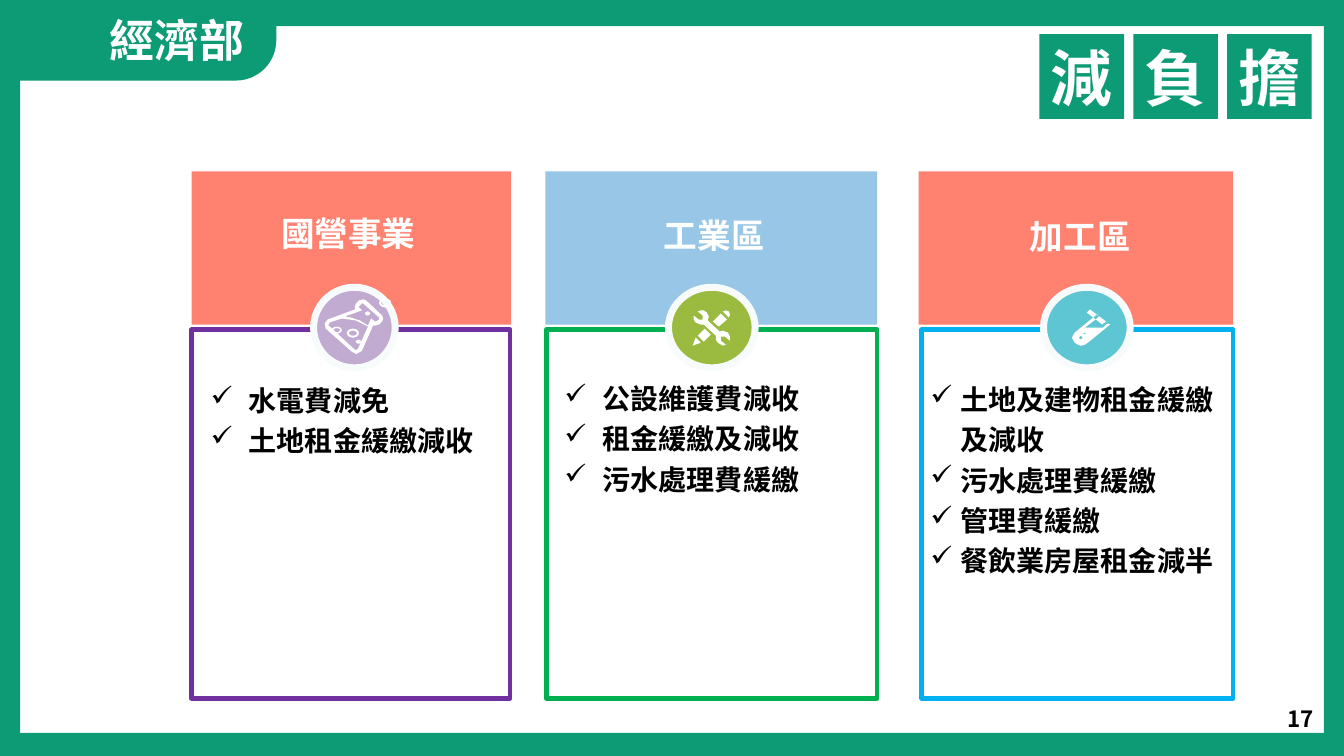
from lxml import etree
from pptx import Presentation
from pptx.dml.color import RGBColor
from pptx.enum.shapes import MSO_SHAPE
from pptx.enum.text import MSO_ANCHOR, MSO_AUTO_SIZE, PP_ALIGN
from pptx.oxml.ns import qn
from pptx.util import Pt

PX = 9144  # EMU in one px, 100 px to the inch
FONT = "Noto Sans CJK SC"
RECT, OVAL, RING = MSO_SHAPE.RECTANGLE, MSO_SHAPE.OVAL, MSO_SHAPE.DONUT
TAB = MSO_SHAPE.ROUND_1_RECTANGLE
LEFT, MID, RIGHT = PP_ALIGN.LEFT, PP_ALIGN.CENTER, PP_ALIGN.RIGHT
TOP, CENTER = MSO_ANCHOR.TOP, MSO_ANCHOR.MIDDLE
HEX = {
    "green": "0C9B74", "white": "FFFFFF", "black": "000000", "ring": "F8FBFC",
    "coral": "FF8271", "sky": "98C6E6", "purple": "7030A0", "leaf": "00B050",
    "blue": "00B0F0", "lilac": "C1ABD1", "olive": "9BBB40", "teal": "5EC6D3",
}
RGB = {name: RGBColor.from_string(code) for name, code in HEX.items()}

deck = Presentation()
deck.slide_width, deck.slide_height = 1333 * PX, 750 * PX
slide = deck.slides.add_slide(deck.slide_layouts[5])
shapes = slide.shapes


def block(kind, box, fill=None, line=None, width=0):
    """Add a preset shape; box is left, top, width, height in px."""
    shape = shapes.add_shape(kind, *[v * PX for v in box])
    shape.shadow.inherit = False
    if fill:
        shape.fill.solid()
        shape.fill.fore_color.rgb = RGB[fill]
    else:
        shape.fill.background()
    if line:
        shape.line.color.rgb = RGB[line]
        shape.line.width = Pt(width)
    else:
        shape.line.fill.background()
    return shape


def write(shape, lines, size, color, align=LEFT, anchor=TOP, space=1.0, hang=0):
    """Fill a shape with bold lines; a hang in px makes them a tick list."""
    frame = shape.text_frame
    frame.word_wrap = True
    frame.auto_size = MSO_AUTO_SIZE.NONE
    frame.vertical_anchor = anchor
    for i, text in enumerate(lines):
        para = frame.add_paragraph() if i else frame.paragraphs[0]
        para.alignment = align
        para.line_spacing = space
        if hang:
            props = para._p.get_or_add_pPr()
            props.set("marL", str(hang * PX))
            props.set("indent", str(-hang * PX))
            etree.SubElement(props, qn("a:buChar")).set("char", "✓")
        run = para.add_run()
        run.text = text
        font = run.font
        font.size, font.bold, font.name = Pt(size), True, FONT
        font.color.rgb = RGB[color]
        east = etree.SubElement(run._r.get_or_add_rPr(), qn("a:ea"))
        east.set("typeface", FONT)


# Green border and title tab
for box in [(36, 0, 1298, 26), (0, 0, 20, 750), (1313, 26, 21, 724), (16, 727, 1298, 23)]:
    block(RECT, box, "green")
tab = block(TAB, (5, 0, 269, 80), "green")
tab.adjustments[0] = 0.5
tab.element.spPr.xfrm.set("flipV", "1")

title = shapes.title
title.left, title.top, title.width, title.height = [v * PX for v in (99, 8, 218, 64)]
write(title, ["經濟部"], 32, "white")
shapes.element.append(title.element)

page = shapes.add_textbox(*[v * PX for v in (1013, 693, 300, 40)])
write(page, ["17"], 16, "black", RIGHT, CENTER)

# Icon outlines, each a list of contours in px
flask = [
    [(363, 298), (360, 297), (356, 298), (353, 301), (352, 304), (352, 307), (325, 317),
     (322, 321), (323, 326), (349, 349), (353, 351), (354, 351), (359, 348), (370, 323),
     (372, 323), (376, 322), (379, 319), (380, 316), (379, 313)],
    [(376, 317), (373, 319), (372, 319), (368, 316), (365, 323), (357, 318), (348, 315),
     (342, 314), (359, 308), (356, 305), (356, 304), (359, 301), (360, 301), (376, 315)],
    [(355, 346), (354, 347), (352, 347), (326, 323), (326, 322), (327, 320), (339, 316),
     (353, 318), (365, 324)],
]
tools = [
    [(721, 317), (715, 311), (707, 319), (713, 324)],
    [(723, 309), (720, 308), (717, 309), (723, 315), (724, 312)],
    [(692, 333), (698, 339), (705, 332), (699, 326)],
    [(687, 343), (695, 340), (690, 335)],
    [(717, 328), (714, 329), (702, 318), (703, 314), (701, 310), (698, 308), (695, 308),
     (692, 309), (697, 313), (697, 317), (693, 317), (688, 313), (688, 317), (690, 320),
     (695, 322), (698, 322), (710, 333), (710, 337), (712, 340), (717, 343), (720, 342),
     (715, 338), (715, 334), (719, 334), (724, 338), (724, 334), (722, 330)],
]
tube = [
    [(1081, 307), (1078, 310), (1079, 311), (1092, 321), (1093, 322), (1097, 319)],
    [(1101, 322), (1099, 321), (1097, 322), (1094, 325), (1076, 325), (1088, 316),
     (1090, 314), (1088, 312), (1066, 330), (1063, 335), (1066, 340), (1069, 342),
     (1072, 343), (1076, 342), (1079, 340)],
    [(1076, 330), (1077, 331), (1076, 332), (1074, 331)],
    [(1072, 337), (1070, 335), (1072, 333), (1074, 335)],
]
bubbles = [
    (RING, (344, 326, 12, 9)), (RING, (376, 296, 12, 9)), (RING, (329, 324, 10, 7)),
    (OVAL, (353, 337, 5, 4)), (OVAL, (362, 309, 5, 4)),
]

# Columns: head, frame, label, disc (left, width), list
columns = [
    ("國營事業", (190, 317, "coral"), (190, 316, "purple"), (203, 198, 285, 1.2),
     (311, 81, "lilac"), flask, bubbles, (199, 369, 305, 38),
     ["水電費減免", "土地租金緩繳減收"]),
    ("工業區", (541, 329, "sky"), (542, 328, "leaf"), (557, 208, 303, 1.0),
     (663, 86, "olive"), tools, [], (550, 367, 301, 38),
     ["公設維護費減收", "租金緩繳及減收", "污水處理費緩繳"]),
    ("加工區", (911, 312, "coral"), (914, 309, "blue"), (929, 201, 285, 1.2),
     (1035, 86, "teal"), tube, [], (913, 368, 301, 30),
     ["土地及建物租金緩繳及減收", "污水處理費緩繳", "管理費緩繳", "餐飲業房屋租金減半"]),
]
for name, head, frame, label, disc, icon, dots, body, items in columns:
    x, w, color = frame
    block(RECT, (x, 327, w, 366), None, color, 3)
    x, w, color = head
    block(RECT, (x, 170, w, 152), color)
    x, y, w, space = label
    box = shapes.add_textbox(x * PX, y * PX, w * PX, 66 * PX)
    write(box, [name], 24, "white", MID, space=space)
    x, w, color = disc
    block(OVAL, (x, 285, w, 80), color, "ring", 5)

    pen = shapes.build_freeform(*icon[0][0], scale=PX)
    for i, points in enumerate(icon):
        if i:
            pen.move_to(*points[0])
        pen.add_line_segments(points[1:], close=True)
    glyph = pen.convert_to_shape()
    glyph.shadow.inherit = False
    glyph.fill.solid()
    glyph.fill.fore_color.rgb = RGB["white"]
    glyph.line.fill.background()
    for kind, box in dots:
        dot = block(kind, box, "white")
        if kind == RING:
            dot.adjustments[0] = 0.22

    x, y, w, hang = body
    box = shapes.add_textbox(x * PX, y * PX, w * PX, 309 * PX)
    write(box, items, 20, "black", space=1.2, hang=hang)

# Theme tiles
for i, char in enumerate("減負擔"):
    tile = block(RECT, (1031 + 93 * i, 34, 84, 84), "green")
    write(tile, [char], 44, "white", MID, CENTER)

deck.save("out.pptx")
